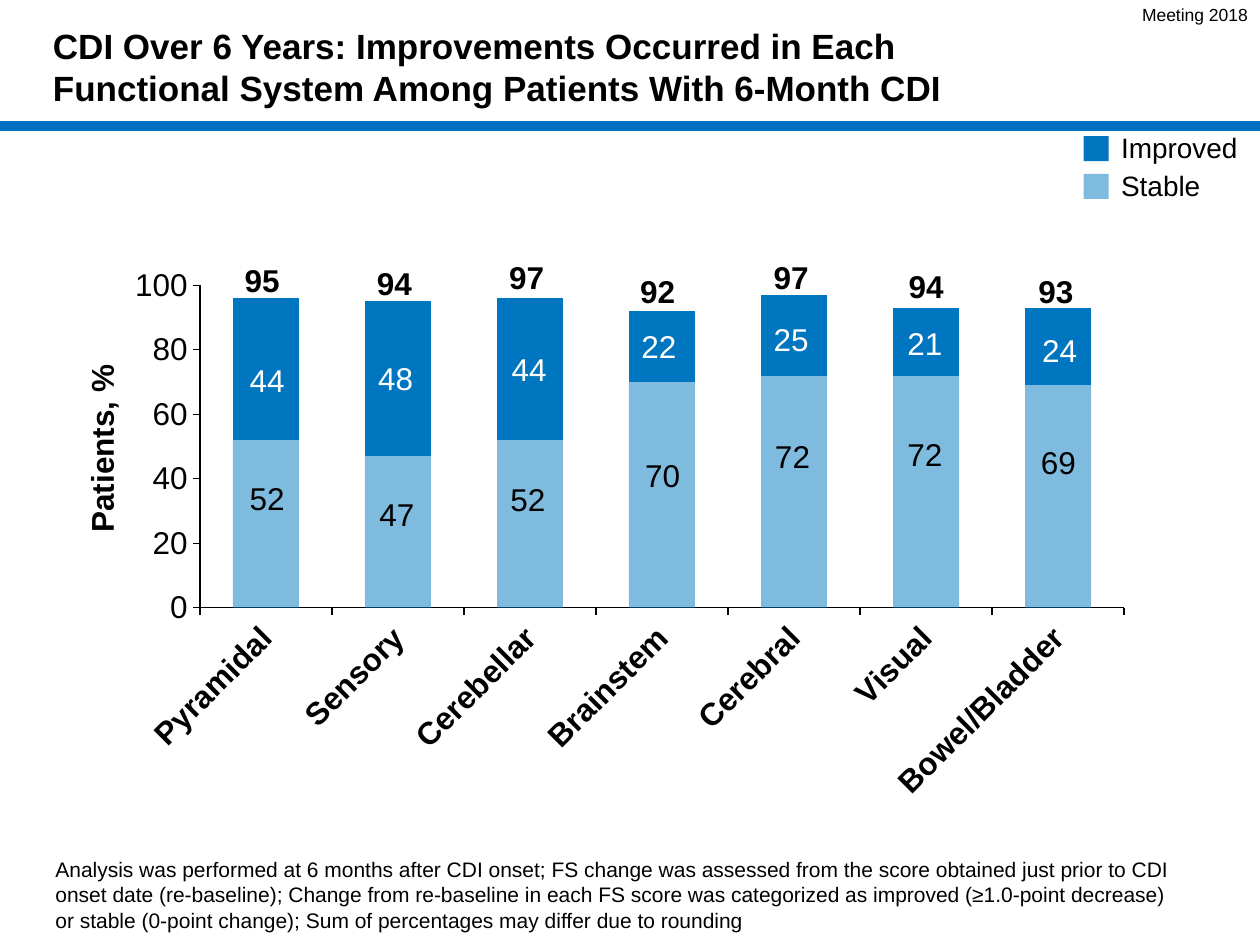
from lxml.etree import SubElement
from pptx import Presentation
from pptx.chart.data import CategoryChartData
from pptx.dml.color import RGBColor
from pptx.enum.chart import XL_CHART_TYPE as ChartType, XL_TICK_MARK as TickMark
from pptx.enum.shapes import MSO_CONNECTOR as Connector, MSO_SHAPE as Shape
from pptx.enum.text import MSO_ANCHOR as Anchor, MSO_AUTO_SIZE as AutoSize, PP_ALIGN as Align
from pptx.oxml import parse_xml
from pptx.oxml.ns import nsdecls, qn
from pptx.util import Inches, Pt

COLORS = {"black": "000000", "white": "FFFFFF", "rule": "0070C0", "bar": "0076C0"}
SYSTEMS = ["Pyramidal", "Sensory", "Cerebellar", "Brainstem", "Cerebral", "Visual", "Bowel/Bladder"]
STABLE = [52, 47, 52, 70, 72, 72, 69]
IMPROVED = [44, 48, 44, 22, 25, 21, 24]
TOTALS = [95, 94, 97, 92, 97, 94, 93]
LABEL_ROWS = [
    (TOTALS, "black", True,
     [(2.08, 2.02), (3.13, 2.05), (4.18, 2), (5.22, 2.11), (6.28, 2), (7.35, 2.07), (8.38, 2.11)]),
    (IMPROVED, "white", False,
     [(2.12, 2.82), (3.14, 2.8), (4.2, 2.73), (5.23, 2.55), (6.28, 2.49), (7.34, 2.52), (8.41, 2.58)]),
    (STABLE, "black", False,
     [(2.12, 3.75), (3.15, 3.88), (4.19, 3.76), (5.26, 3.57), (6.29, 3.42), (7.34, 3.4), (8.4, 3.47)]),
]
TITLE = ("CDI Over 6 Years: Improvements Occurred in Each\v"
         "Functional System Among Patients With 6-Month CDI")
FOOTNOTE = ("Analysis was performed at 6 months after CDI onset; FS change was assessed from the score "
            "obtained just prior to CDI onset date (re-baseline); Change from re-baseline in each FS score "
            "was categorized as improved (≥1.0-point decrease) or stable (0-point change); "
            "Sum of percentages may differ due to rounding")


class SlideBuilder:
    """Holds the slide and its style, and adds each kind of element."""

    font_name = "Arial"

    def __init__(self, slide):
        self.slide = slide

    def color(self, name):
        return RGBColor.from_string(COLORS[name])

    def style_font(self, font, size, color="black", bold=False):
        font.name = self.font_name
        font.size = Pt(size)
        font.bold = bold
        font.color.rgb = self.color(color)

    def box(self, left, top, width, height):
        return [Inches(length) for length in (left, top, width, height)]

    def fill(self, target, color, opacity=100):
        target.fill.solid()
        target.fill.fore_color.rgb = self.color(color)
        if opacity < 100:
            for color_element in target.fill._xPr.iter(qn("a:srgbClr")):
                SubElement(color_element, qn("a:alpha"), val=str(opacity * 1000))

    def title(self, text, left, top, width, height):
        shape = self.slide.shapes.title
        shape.left, shape.top, shape.width, shape.height = self.box(left, top, width, height)
        frame = shape.text_frame
        frame.text = text
        frame.vertical_anchor = Anchor.MIDDLE
        frame.paragraphs[0].alignment = Align.LEFT
        self.style_font(frame.paragraphs[0].font, 20, bold=True)

    def text(self, text, left, top, width, height, size, color="black", bold=False, align=Align.LEFT):
        frame = self.slide.shapes.add_textbox(*self.box(left, top, width, height)).text_frame
        frame.word_wrap = True
        frame.auto_size = AutoSize.SHAPE_TO_FIT_TEXT
        paragraph = frame.paragraphs[0]
        paragraph.text = text
        paragraph.alignment = align
        self.style_font(paragraph.font, size, color, bold)
        return frame

    def footnote(self, text, left, top, width, height):
        frame = self.text(text, left, top, width, height, 12)
        frame.auto_size = AutoSize.NONE
        frame.vertical_anchor = Anchor.MIDDLE
        frame.margin_left = frame.margin_right = frame.margin_top = frame.margin_bottom = 0

    def rule(self, top, width, weight):
        line = self.slide.shapes.add_connector(
            Connector.STRAIGHT, 0, Inches(top), Inches(width), Inches(top))
        line.line.color.rgb = self.color("rule")
        line.line.width = Pt(weight)
        SubElement(line._element.spPr, qn("a:effectLst"))

    def legend_entry(self, text, top, opacity):
        swatch = self.slide.shapes.add_shape(Shape.RECTANGLE, *self.box(8.6, top, 0.2, 0.2))
        swatch.shadow.inherit = False
        swatch.line.fill.background()
        self.fill(swatch, "bar", opacity)
        self.text(text, 8.8, top - 0.09, 1.2, 0.37, 16)

    def layout(self, **settings):
        children = "".join(f'<c:{key} val="{value}"/>' for key, value in settings.items())
        return parse_xml(f'<c:layout {nsdecls("c")}><c:manualLayout>{children}</c:manualLayout></c:layout>')

    def replace_layout(self, parent, layout, index):
        for old in parent.findall(qn("c:layout")):
            parent.remove(old)
        parent.insert(index, layout)

    def axis(self, axis, bold=False):
        axis.has_major_gridlines = False
        axis.major_tick_mark = TickMark.OUTSIDE
        axis.minor_tick_mark = TickMark.NONE
        axis.format.line.color.rgb = self.color("black")
        axis.format.line.width = Pt(0.75)
        self.style_font(axis.tick_labels.font, 18, bold=bold)

    def chart(self, left, top, width, height):
        data = CategoryChartData()
        data.categories = SYSTEMS
        data.add_series("Stable", STABLE)
        data.add_series("Improved", IMPROVED)
        chart = self.slide.shapes.add_chart(
            ChartType.COLUMN_STACKED, *self.box(left, top, width, height), data).chart
        chart.has_legend = False
        chart.has_title = False
        self.style_font(chart.font, 18)

        plot = chart.plots[0]
        plot.gap_width = 100
        plot.overlap = 100
        plot.vary_by_categories = False
        for series, opacity in zip(plot.series, (50, 100)):
            self.fill(series.format, "bar", opacity)

        self.axis(chart.category_axis, bold=True)
        chart.category_axis._element.find(qn("c:txPr")).find(qn("a:bodyPr")).set("rot", "-2700000")
        value_axis = chart.value_axis
        self.axis(value_axis)
        value_axis.minimum_scale, value_axis.maximum_scale, value_axis.major_unit = 0, 100, 20
        axis_title = value_axis.axis_title
        axis_title.text_frame.text = "Patients, %"
        self.style_font(axis_title.text_frame.paragraphs[0].font, 18, bold=True)
        axis_title.text_frame._txBody.find(qn("a:bodyPr")).set("rot", "-5400000")

        self.replace_layout(axis_title._element, self.layout(xMode="edge", yMode="edge", x=0, y=0.27), 1)
        plot_layout = self.layout(layoutTarget="inner", xMode="edge", yMode="edge",
                                  x=0.114, y=0.154, w=0.847, h=0.509)
        self.replace_layout(chart._chartSpace.chart.plotArea, plot_layout, 0)


def main():
    presentation = Presentation()
    presentation.slide_width, presentation.slide_height = Inches(10), Inches(7.5)
    builder = SlideBuilder(presentation.slides.add_slide(presentation.slide_layouts[5]))

    builder.rule(1, 10, 5.75)
    builder.title(TITLE, 0.32, 0.08, 8.28, 0.9)
    builder.chart(0.6, 1.49, 8.66, 5.03)
    for values, color, bold, places in LABEL_ROWS:
        for value, (center, top) in zip(values, places):
            builder.text(str(value), center - 0.27, top, 0.54, 0.4, 18, color, bold, Align.CENTER)
    builder.footnote(FOOTNOTE, 0.44, 6.75, 8.96, 0.7)
    builder.text("Meeting 2018", 8.12, -0.02, 1.88, 0.27, 10, align=Align.RIGHT)
    builder.legend_entry("Improved", 1.08, 100)
    builder.legend_entry("Stable", 1.38, 50)

    presentation.save("out.pptx")


if __name__ == "__main__":
    main()
